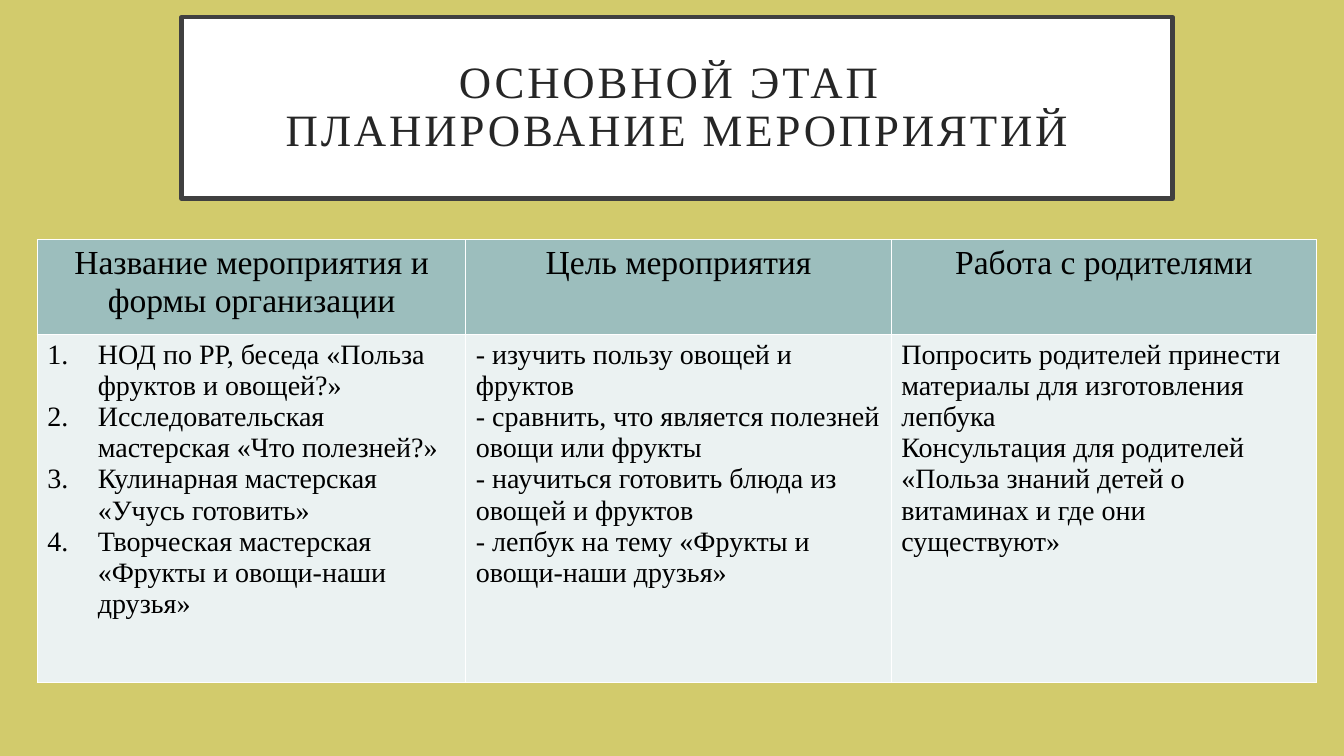
from dataclasses import dataclass

from lxml import etree
from pptx import Presentation
from pptx.dml.color import RGBColor
from pptx.enum.text import MSO_ANCHOR, MSO_AUTO_SIZE, PP_ALIGN
from pptx.oxml.ns import qn
from pptx.slide import Slide
from pptx.table import _Cell
from pptx.text.text import _Paragraph
from pptx.util import Emu, Pt

MIDDLE = MSO_ANCHOR.MIDDLE
NO_FIT = MSO_AUTO_SIZE.NONE
CENTER, LEFT = PP_ALIGN.CENTER, PP_ALIGN.LEFT

OLIVE = RGBColor(0xD2, 0xCB, 0x6C)
WHITE = RGBColor(0xFF, 0xFF, 0xFF)
BLACK = RGBColor(0x00, 0x00, 0x00)
FRAME = RGBColor(0x40, 0x40, 0x40)
INK = RGBColor(0x26, 0x26, 0x26)
TEAL = RGBColor(0x9C, 0xBE, 0xBD)
PALE = RGBColor(0xEB, 0xF2, 0xF2)

FONT = "Times New Roman"
TITLE_ONLY = 5
SIDES = ("a:lnL", "a:lnR", "a:lnT", "a:lnB")
ROWS = (94, 345)


@dataclass(frozen=True)
class Column:
    width: int
    head: str
    items: tuple[str, ...]
    listed: bool = False


TITLE = ("ОСНОВНОЙ ЭТАП ", "ПЛАНИРОВАНИЕ МЕРОПРИЯТИЙ")
COLUMNS = (
    Column(425, "Название мероприятия и формы организации", (
        "НОД по РР, беседа «Польза фруктов и овощей?»",
        "Исследовательская мастерская «Что полезней?»",
        "Кулинарная мастерская «Учусь готовить»",
        "Творческая мастерская «Фрукты и овощи-наши друзья»",
    ), listed=True),
    Column(422, "Цель мероприятия", (
        "- изучить пользу овощей и фруктов",
        "- сравнить, что является полезней овощи или фрукты",
        "- научиться готовить блюда из овощей и фруктов",
        "- лепбук на тему «Фрукты и овощи-наши друзья»",
    )),
    Column(422, "Работа с родителями", (
        "Попросить родителей принести материалы для изготовления лепбука",
        "Консультация для родителей «Польза знаний детей о витаминах и где они существуют»",
    )),
)


def px(count: int) -> Emu:
    """Convert px, at 100 to the inch, into EMU."""
    return Emu(count * 9144)


def add_run(para: _Paragraph, text: str, size: int, color: RGBColor, gap: int = 0) -> None:
    """Add a run; gap is the letter spacing in points."""
    run = para.add_run()
    run.text = text
    font = run.font
    font.name, font.size, font.bold = FONT, Pt(size), False
    font.color.rgb = color
    if gap:
        font._element.set("spc", str(gap * 100))


def number(para: _Paragraph) -> None:
    """Turn the paragraph into a numbered item with a hanging indent."""
    props = para._p.get_or_add_pPr()
    props.set("marL", str(px(50)))
    props.set("indent", str(px(-50)))
    etree.SubElement(props, qn("a:buFont"), typeface="+mj-lt")
    etree.SubElement(props, qn("a:buAutoNum"), type="arabicPeriod")


def border(cell: _Cell) -> None:
    props = cell._tc.get_or_add_tcPr()
    for side in SIDES:
        line = etree.SubElement(props, qn(side), w=str(Pt(1)))
        fill = etree.SubElement(line, qn("a:solidFill"))
        etree.SubElement(fill, qn("a:srgbClr"), val=str(WHITE))


def fill_cell(cell: _Cell, texts: tuple[str, ...], size: int, color: RGBColor,
              align: PP_ALIGN, listed: bool = False) -> None:
    border(cell)
    cell.fill.solid()
    cell.fill.fore_color.rgb = color
    frame = cell.text_frame
    for index, text in enumerate(texts):
        para = frame.add_paragraph() if index else frame.paragraphs[0]
        para.alignment = align
        if listed:
            number(para)
        add_run(para, text, size, BLACK)


def add_title(slide: Slide) -> None:
    title = slide.shapes.title
    title.left, title.top, title.width, title.height = map(px, (180, 17, 983, 180))
    title.fill.solid()
    title.fill.fore_color.rgb = WHITE
    title.line.color.rgb = FRAME
    title.line.width = Pt(3)
    frame = title.text_frame
    frame.word_wrap = True
    frame.auto_size = NO_FIT
    frame.vertical_anchor = MIDDLE
    frame.margin_left = frame.margin_right = px(30)
    frame.margin_top = frame.margin_bottom = px(20)
    para = frame.paragraphs[0]
    para.alignment = CENTER
    para.line_spacing = 0.9
    for index, text in enumerate(TITLE):
        if index:
            para.add_line_break()
        add_run(para, text, 32, INK, gap=2)


def add_plan(slide: Slide) -> None:
    width = sum(column.width for column in COLUMNS)
    table = slide.shapes.add_table(
        len(ROWS), len(COLUMNS), px(37), px(238), px(width), px(sum(ROWS))).table
    table.first_row = table.horz_banding = False
    for row, height in zip(table.rows, ROWS):
        row.height = px(height)
    for index, column in enumerate(COLUMNS):
        table.columns[index].width = px(column.width)
        fill_cell(table.cell(0, index), (column.head,), 24, TEAL, CENTER)
        fill_cell(table.cell(1, index), column.items, 20, PALE, LEFT, column.listed)


def main() -> None:
    deck = Presentation()
    deck.slide_width, deck.slide_height = px(1333), px(750)
    slide = deck.slides.add_slide(deck.slide_layouts[TITLE_ONLY])
    back = slide.background.fill
    back.solid()
    back.fore_color.rgb = OLIVE
    add_title(slide)
    add_plan(slide)
    deck.save("out.pptx")


if __name__ == "__main__":
    main()
